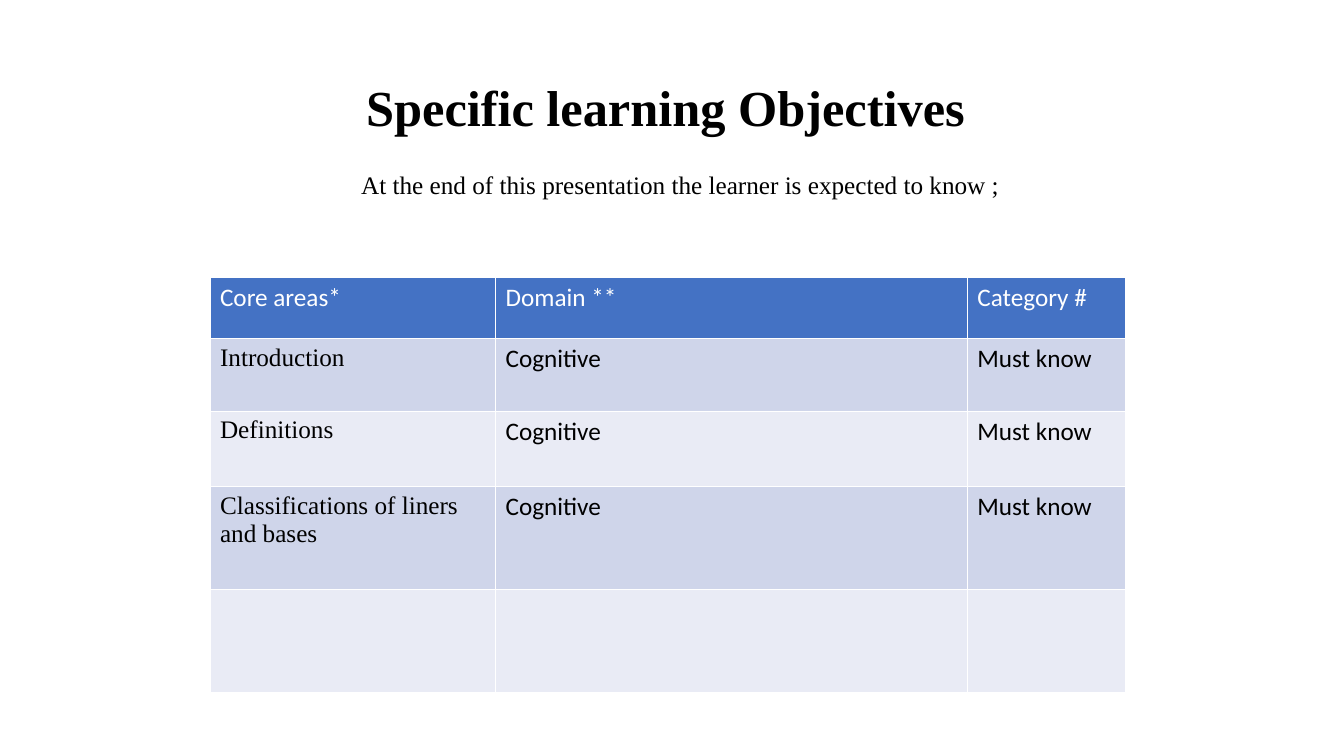
from pptx import Presentation
from pptx.dml.color import RGBColor
from pptx.enum.text import MSO_ANCHOR as Anchor, PP_ALIGN as Align
from pptx.util import Inches, Pt

SERIF, SANS = "Times New Roman", "Calibri"
BLACK, WHITE = "000000", "FFFFFF"
HEADER_FILL, BANDS = "4472C4", ("CFD5EA", "E9EBF5")
COLUMN_WIDTHS = (34, 56.16, 18.84)
ROW_HEIGHTS = (7.32, 8.64, 9, 12.24, 12.24)
HEADINGS = ("Core areas*", "Domain **", "Category #")
CORE_AREAS = ("Introduction", "Definitions", "Classifications of liners and bases")


def color(hex_value):
    return RGBColor.from_string(hex_value)


def apply(target, formats):
    for name, value in formats.items():
        setattr(target, name, value)


class ObjectivesSlide:
    def __init__(self, deck):
        self.slide = deck.slides.add_slide(deck.slide_layouts[6])
        self.column = deck.slide_width / 160
        self.row = deck.slide_height / 90

    def place(self, left, top, width, height):
        return (round(left * self.column), round(top * self.row),
                round(width * self.column), round(height * self.row))

    def add_wording(self, paragraph, wording, ink=BLACK, **font):
        run = paragraph.add_run()
        run.text = wording
        apply(run.font, font)
        run.font.color.rgb = color(ink)

    def text(self, wording, area, anchor, spacing, **font):
        frame = self.slide.shapes.add_textbox(*self.place(*area)).text_frame
        apply(frame, {"word_wrap": True, "vertical_anchor": anchor})
        paragraph = frame.paragraphs[0]
        apply(paragraph, {"alignment": Align.CENTER, "line_spacing": 0.9,
                          "space_before": spacing})
        self.add_wording(paragraph, wording, name=SERIF, **font)

    def table(self, records, left, top, widths, heights):
        area = self.place(left, top, sum(widths), sum(heights))
        grid = self.slide.shapes.add_table(len(heights), len(widths), *area).table
        for column, width in zip(grid.columns, widths):
            column.width = round(width * self.column)
        for row, height in zip(grid.rows, heights):
            row.height = round(height * self.row)
        for r, record in enumerate(records):
            for c, wording in enumerate(record):
                cell = grid.cell(r, c)
                cell.fill.solid()
                cell.fill.fore_color.rgb = color(BANDS[(r - 1) % 2] if r else HEADER_FILL)
                if wording:
                    self.add_wording(cell.text_frame.paragraphs[0], wording,
                                     BLACK if r else WHITE, size=Pt(18), bold=False,
                                     name=SERIF if r and c == 0 else SANS)


def main():
    deck = Presentation()
    apply(deck, {"slide_width": Inches(13.33), "slide_height": Inches(7.5)})
    objectives = ObjectivesSlide(deck)
    objectives.text("Specific learning Objectives ", (29, 5, 102, 12),
                    Anchor.BOTTOM, Pt(0), size=Pt(36), bold=True)
    objectives.text("At the end of this presentation the learner is expected to know ;",
                    (29, 20, 104, 62), Anchor.TOP, Pt(10), size=Pt(18))
    records = [HEADINGS, *((area, "Cognitive", "Must know") for area in CORE_AREAS),
               ("", "", "")]
    objectives.table(records, 25, 33, COLUMN_WIDTHS, ROW_HEIGHTS)
    deck.save("out.pptx")


if __name__ == "__main__":
    main()
